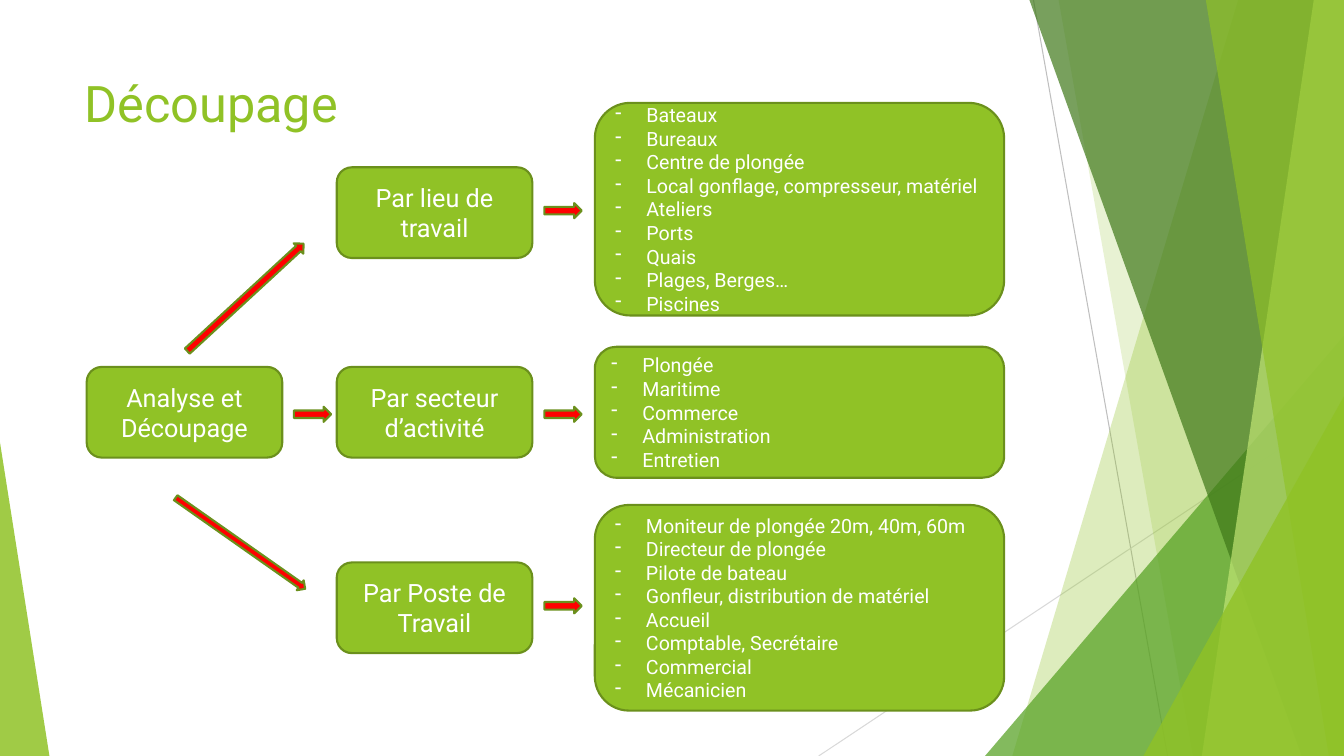
from lxml.etree import SubElement
from pptx import Presentation
from pptx.dml.color import RGBColor
from pptx.enum.shapes import MSO_CONNECTOR, MSO_SHAPE as Preset
from pptx.enum.text import MSO_ANCHOR as Anchor, PP_ALIGN as Align
from pptx.oxml.ns import qn
from pptx.util import Inches, Pt

WIDTH, HEIGHT = 13.33, 7.5
FONT = "Roboto"
WHITE = RGBColor(0xFF, 0xFF, 0xFF)
LIME = RGBColor(0x90, 0xC2, 0x26)
OLIVE = RGBColor(0x6B, 0x90, 0x1C)
LEAF = RGBColor(0x54, 0xA0, 0x21)
FOREST = RGBColor(0x3F, 0x78, 0x19)
PALE = RGBColor(0xC0, 0xE4, 0x74)
RED = RGBColor(0xFF, 0x00, 0x00)
GREY = RGBColor(0xBF, 0xBF, 0xBF)
LIGHT_GREY = RGBColor(0xD9, 0xD9, 0xD9)

TITLE = "Découpage"
ROOT = "Analyse et Découpage"
# label, box top, arrow centre, list top, list height, list entries
BRANCHES = [
    ("Par lieu de travail", 1.66, 2.09, 1.02, 2.11,
     ["Bateaux", "Bureaux", "Centre de plongée",
      "Local gonflage, compresseur, matériel", "Ateliers", "Ports", "Quais",
      "Plages, Berges…", "Piscines"]),
    ("Par secteur d’activité", 3.64, 4.11, 3.44, 1.3,
     ["Plongée", "Maritime", "Commerce", "Administration", "Entretien"]),
    ("Par Poste de Travail", 5.58, 6.01, 5.01, 2.04,
     ["Moniteur de plongée 20m, 40m, 60m", "Directeur de plongée",
      "Pilote de bateau", "Gonfleur, distribution de matériel", "Accueil",
      "Comptable, Secrétaire", "Commercial", "Mécanicien"]),
]
ROOT_ROW = BRANCHES[1]

# Columns of the diagram
ROOT_LEFT, BRANCH_LEFT, LIST_LEFT = 0.86, 3.34, 5.9
BOX_WIDTH, BOX_HEIGHT, LIST_WIDTH = 1.94, 0.9, 4.06
ROOT_ARROW, LIST_ARROW = 3.1, 5.585
SHORT_ARROW = (0.37, 0.15)
# centre x, centre y, length, thickness, rotation
DIAGONAL_ARROWS = [(2.435, 2.95, 1.57, 0.14, 317.3),
                   (2.385, 5.39, 1.57, 0.12, 35.1)]

RAYS = [((10.25, 0), (11.58, HEIGHT), GREY),
        ((WIDTH, 4.03), (8.12, HEIGHT), LIGHT_GREY)]
# Bands reach the right edge: top-left x, bottom-left x, colour, opacity %
# Triangles: left, top, width, apex share, colour, opacity %
DECOR = [
    ("band", 12.28, 10.04, LIME, 30),
    ("band", 10.5, 11.83, LIME, 20),
    ("triangle", 9.77, 3.33, 3.56, 1, LEAF, 72),
    ("band", 10.21, 12.91, FOREST, 70),
    ("band", 13.03, 11.92, PALE, 70),
    ("band", 11.96, 13.18, LIME, 65),
    ("triangle", 11.34, 3.93, 1.99, 1, LIME, 80),
    ("triangle", 0, 4.39, 0.49, 0, LIME, 85),
]


def paint(shape, color, opacity=100, outline=None):
    shape.shadow.inherit = False
    shape.fill.solid()
    shape.fill.fore_color.rgb = color
    if opacity < 100:
        tint = shape.fill._xPr.find(qn("a:solidFill"))[0]
        SubElement(tint, qn("a:alpha"), val=str(opacity * 1000))
    if outline is None:
        shape.line.fill.background()
    else:
        shape.line.color.rgb = outline
        shape.line.width = Pt(1.5)


def add_preset(shapes, preset, left, top, width, height):
    return shapes.add_shape(preset, Inches(left), Inches(top),
                            Inches(width), Inches(height))


def add_ray(shapes, start, end, color):
    ray = shapes.add_connector(MSO_CONNECTOR.STRAIGHT,
                               *map(Inches, start + end))
    ray.line.color.rgb = color
    ray.line.width = Pt(0.75)
    SubElement(ray._element.spPr, qn("a:effectLst"))


def add_band(shapes, top_x, bottom_x, color, opacity):
    builder = shapes.build_freeform(Inches(top_x), 0)
    corners = [(WIDTH, 0), (WIDTH, HEIGHT), (bottom_x, HEIGHT)]
    builder.add_line_segments([(Inches(x), Inches(y)) for x, y in corners])
    paint(builder.convert_to_shape(), color, opacity)


def add_triangle(shapes, left, top, width, apex, color, opacity):
    triangle = add_preset(shapes, Preset.ISOSCELES_TRIANGLE,
                          left, top, width, HEIGHT - top)
    triangle.adjustments[0] = apex
    paint(triangle, color, opacity)


def write(frame, lines, size, color, align=Align.LEFT, anchor=Anchor.MIDDLE):
    frame.word_wrap = True
    frame.vertical_anchor = anchor
    frame.text = "\n".join(lines)
    for paragraph in frame.paragraphs:
        paragraph.alignment = align
        paragraph.font.size = Pt(size)
        paragraph.font.name = FONT
        paragraph.font.color.rgb = color


def add_box(shapes, left, top, width, height, lines, size, align):
    box = add_preset(shapes, Preset.ROUNDED_RECTANGLE,
                     left, top, width, height)
    paint(box, LIME, outline=OLIVE)
    write(box.text_frame, lines, size, WHITE, align)
    return box


def add_label(shapes, left, top, label):
    add_box(shapes, left, top, BOX_WIDTH, BOX_HEIGHT, [label], 18, Align.CENTER)


def add_dashes(frame):
    """Give each paragraph a hanging dash."""
    indent = Inches(0.31)
    for paragraph in frame.paragraphs:
        properties = paragraph._p.get_or_add_pPr()
        properties.set("marL", str(indent))
        properties.set("indent", str(-indent))
        bullet = properties.makeelement(qn("a:buChar"), {"char": "-"})
        properties.insert_element_before(bullet, "a:tabLst", "a:defRPr")


def add_arrow(shapes, center_x, center_y, length, thickness, rotation=0):
    arrow = add_preset(shapes, Preset.RIGHT_ARROW, center_x - length / 2,
                       center_y - thickness / 2, length, thickness)
    arrow.rotation = rotation
    paint(arrow, RED, outline=OLIVE)


def main():
    presentation = Presentation()
    presentation.slide_width = Inches(WIDTH)
    presentation.slide_height = Inches(HEIGHT)
    slide = presentation.slides.add_slide(presentation.slide_layouts[6])
    shapes = slide.shapes

    for ray in RAYS:
        add_ray(shapes, *ray)
    painters = {"band": add_band, "triangle": add_triangle}
    for kind, *details in DECOR:
        painters[kind](shapes, *details)

    title = shapes.add_textbox(Inches(0.74), Inches(0.67),
                               Inches(9.4), Inches(1.44))
    write(title.text_frame, [TITLE], 36, LIME, anchor=Anchor.TOP)

    add_label(shapes, ROOT_LEFT, ROOT_ROW[1], ROOT)
    for label, top, arrow_y, list_top, list_height, entries in BRANCHES:
        add_label(shapes, BRANCH_LEFT, top, label)
        entry_box = add_box(shapes, LIST_LEFT, list_top, LIST_WIDTH,
                            list_height, entries, 14, Align.LEFT)
        add_dashes(entry_box.text_frame)
        add_arrow(shapes, LIST_ARROW, arrow_y, *SHORT_ARROW)

    add_arrow(shapes, ROOT_ARROW, ROOT_ROW[2], *SHORT_ARROW)
    for arrow in DIAGONAL_ARROWS:
        add_arrow(shapes, *arrow)

    presentation.save("out.pptx")


if __name__ == "__main__":
    main()
